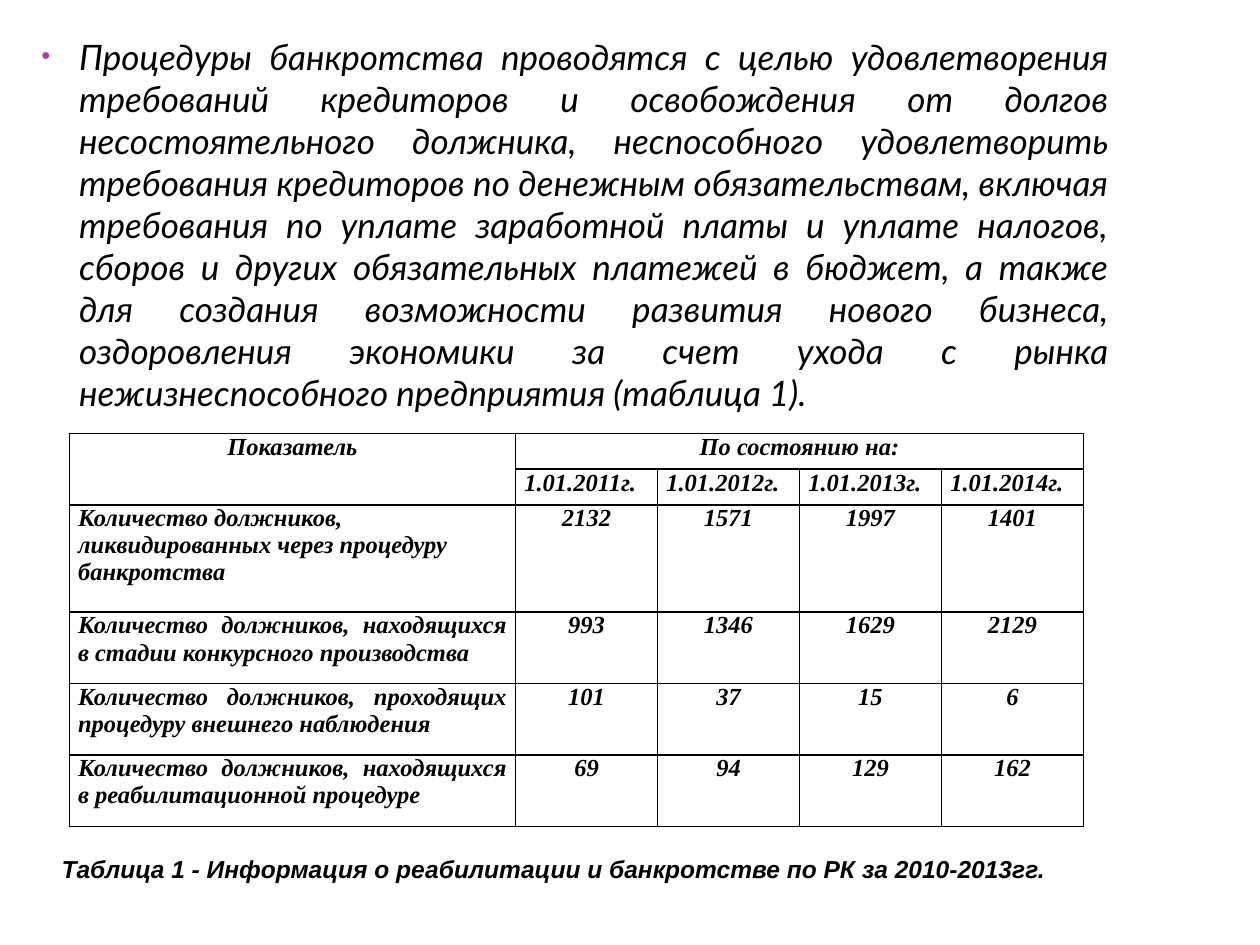
from dataclasses import dataclass

from lxml.etree import SubElement
from pptx import Presentation
from pptx.dml.color import RGBColor
from pptx.enum.text import MSO_ANCHOR, PP_ALIGN
from pptx.oxml.ns import qn
from pptx.util import Inches, Pt


@dataclass(frozen=True)
class Theme:
    ink: str = "000000"
    bullet: str = "B13F9A"
    body_font: str = "Lato"
    table_font: str = "Times New Roman"
    caption_font: str = "Arial"
    body_size: int = 20
    small_size: int = 14
    border: float = 1


THEME = Theme()

INTRO = (
    "Процедуры банкротства проводятся с целью удовлетворения требований кредиторов "
    "и освобождения от долгов несостоятельного должника, неспособного удовлетворить "
    "требования кредиторов по денежным обязательствам, включая требования по уплате "
    "заработной платы и уплате налогов, сборов и других обязательных платежей в бюджет, "
    "а также для создания возможности развития нового бизнеса, оздоровления экономики "
    "за счет ухода с рынка нежизнеспособного предприятия (таблица 1)."
)
CAPTION = "Таблица 1 - Информация о реабилитации и банкротстве по РК за 2010-2013гг."
DATES = ["1.01.2011г.", "1.01.2012г.", "1.01.2013г.", "1.01.2014г."]
DEBTORS = [
    ("Количество должников, ликвидированных через процедуру банкротства",
     [2132, 1571, 1997, 1401]),
    ("Количество должников, находящихся в стадии конкурсного производства",
     [993, 1346, 1629, 2129]),
    ("Количество должников, проходящих процедуру внешнего наблюдения",
     [101, 37, 15, 6]),
    ("Количество должников, находящихся в реабилитационной процедуре",
     [69, 94, 129, 162]),
]
LABEL_SHARE = 0.44  # share of the table width taken by the label column
ROW_UNITS = [1, 1, 3, 2, 2, 2]


def style_paragraph(para, text, font, size, align=PP_ALIGN.LEFT, bold=True):
    para.text = text
    para.alignment = align
    para.font.name = font
    para.font.size = Pt(size)
    para.font.bold = bold
    para.font.italic = True
    para.font.color.rgb = RGBColor.from_string(THEME.ink)


def add_text_box(page, box):
    frame = page.shapes.add_textbox(*map(Inches, box)).text_frame
    frame.word_wrap = True
    frame.vertical_anchor = MSO_ANCHOR.TOP
    return frame.paragraphs[0]


def add_bullet(para, indent):
    props = para._p.get_or_add_pPr()
    props.set("marL", str(Inches(indent)))
    props.set("indent", str(-Inches(indent)))
    color = SubElement(props, qn("a:buClr"))
    SubElement(color, qn("a:srgbClr"), val=THEME.bullet)
    SubElement(props, qn("a:buSzPct"), val="73000")
    SubElement(props, qn("a:buFont"), typeface="Arial")
    SubElement(props, qn("a:buChar"), char="•")


def add_intro(page, box):
    para = add_text_box(page, box)
    add_bullet(para, 0.3)
    style_paragraph(para, INTRO, THEME.body_font, THEME.body_size,
                    PP_ALIGN.JUSTIFY, bold=False)


def frame_cell(cell):
    """Plain cell with a thin border on every side."""
    cell.margin_left = cell.margin_right = Inches(0.07)
    cell.margin_top = cell.margin_bottom = 0
    props = cell._tc.get_or_add_tcPr()
    for side in ("lnL", "lnR", "lnT", "lnB"):
        line = SubElement(props, qn(f"a:{side}"), w=str(Pt(THEME.border)))
        fill = SubElement(line, qn("a:solidFill"))
        SubElement(fill, qn("a:srgbClr"), val=THEME.ink)
    cell.fill.background()


def add_debtor_table(page, box):
    left, top, width, height = box
    row_count, column_count = len(ROW_UNITS), len(DATES) + 1
    table = page.shapes.add_table(row_count, column_count, *map(Inches, box)).table
    table.first_row = table.horz_banding = False

    # Grid: one wide label column, equal date columns, rows in whole units
    label_width = width * LABEL_SHARE
    date_width = (width - label_width) / len(DATES)
    for index, column in enumerate(table.columns):
        column.width = Inches(date_width if index else label_width)
    for row, units in zip(table.rows, ROW_UNITS):
        row.height = Inches(height * units / sum(ROW_UNITS))
    for cell in table.iter_cells():
        frame_cell(cell)

    def write(row, column, text, align):
        style_paragraph(table.cell(row, column).text_frame.paragraphs[0], str(text),
                        THEME.table_font, THEME.small_size, align)

    # Two-level heading
    table.cell(0, 0).merge(table.cell(1, 0))
    table.cell(0, 1).merge(table.cell(0, column_count - 1))
    write(0, 0, "Показатель", PP_ALIGN.CENTER)
    write(0, 1, "По состоянию на:", PP_ALIGN.CENTER)
    for column, date in enumerate(DATES, start=1):
        write(1, column, date, PP_ALIGN.JUSTIFY)

    # Debtor counts
    for row, (label, counts) in enumerate(DEBTORS, start=2):
        write(row, 0, label, PP_ALIGN.LEFT if row == 2 else PP_ALIGN.JUSTIFY)
        for column, count in enumerate(counts, start=1):
            write(row, column, count, PP_ALIGN.CENTER)


def add_caption(page, box):
    style_paragraph(add_text_box(page, box), CAPTION,
                    THEME.caption_font, THEME.small_size)


def main():
    deck = Presentation()
    deck.slide_width, deck.slide_height = Inches(10), Inches(7.5)
    page = deck.slides.add_slide(deck.slide_layouts[6])
    add_intro(page, (0.23, 0.23, 8.67, 3.28))
    add_debtor_table(page, (0.55, 3.44, 8.05, 3.12))
    add_caption(page, (0.39, 6.73, 8.05, 0.64))
    deck.save("out.pptx")


if __name__ == "__main__":
    main()
